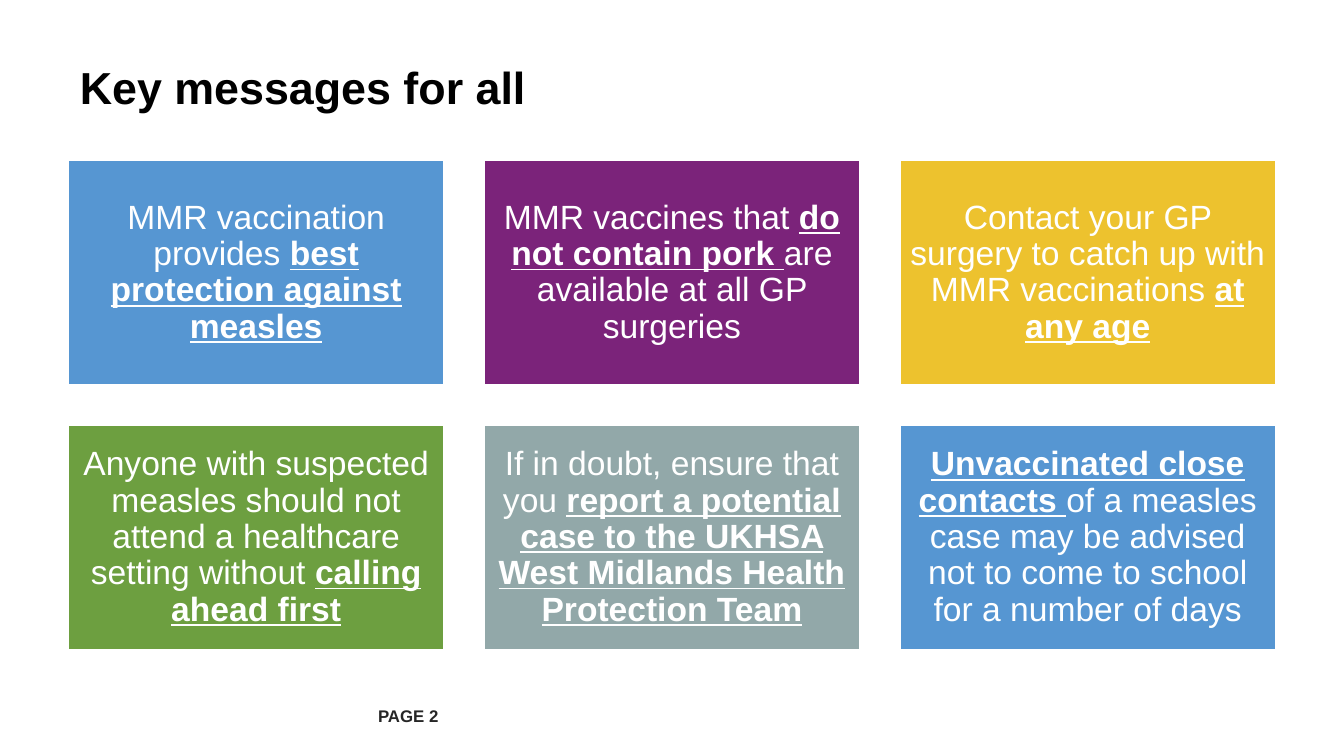
from dataclasses import dataclass

from pptx import Presentation
from pptx.dml.color import RGBColor
from pptx.enum.shapes import MSO_SHAPE
from pptx.enum.text import MSO_ANCHOR, MSO_AUTO_SIZE, PP_ALIGN
from pptx.util import Pt

PX = 9525


@dataclass(frozen=True)
class Theme:
    """Colours, font and type sizes of the slide."""
    font: str = "Arial"
    black: str = "000000"
    grey: str = "262626"
    white: str = "FFFFFF"
    blue: str = "5696D2"
    plum: str = "7B237A"
    gold: str = "EDC22E"
    green: str = "6D9F40"
    slate: str = "92A8A9"
    head: int = 24
    body: int = 18
    foot: int = 9


THEME = Theme()

CARDS = [
    (THEME.blue, [("MMR vaccination provides ", False),
                  ("best protection against measles", True)]),
    (THEME.plum, [("MMR vaccines that ", False),
                  ("do not contain pork ", True),
                  ("are available at all GP surgeries", False)]),
    (THEME.gold, [("Contact your GP surgery to catch up with MMR vaccinations ", False),
                  ("at any age", True)]),
    (THEME.green, [("Anyone with suspected measles should not attend "
                    "a healthcare setting without ", False),
                   ("calling ahead first", True)]),
    (THEME.slate, [("If in doubt, ensure that you ", False),
                   ("report a potential case to the UKHSA "
                    "West Midlands Health Protection Team", True)]),
    (THEME.blue, [("Unvaccinated close contacts ", True),
                  ("of a measles case may be advised not to come "
                   "to school for a number of days", False)]),
]


def scale(*sizes):
    """Turn px lengths into EMU."""
    return [round(size * PX) for size in sizes]


def style(para, size, color, align, bold=None):
    """Set the font and alignment of a paragraph."""
    para.alignment = align
    para.font.name = THEME.font
    para.font.size = Pt(size)
    para.font.bold = bold
    para.font.color.rgb = RGBColor.from_string(color)


def inset(frame, side, top):
    """Wrap and centre a text frame vertically, with px margins."""
    frame.word_wrap = True
    frame.auto_size = MSO_AUTO_SIZE.NONE
    frame.vertical_anchor = MSO_ANCHOR.MIDDLE
    frame.margin_left, frame.margin_right = scale(side, side)
    frame.margin_top, frame.margin_bottom = scale(top, top)


def add_title(slide, box, text):
    """Fill the title placeholder within the box."""
    title = slide.shapes.title
    title.left, title.top, title.width, title.height = scale(*box)
    title.text_frame.text = text
    inset(title.text_frame, 9, 4)
    style(title.text_frame.paragraphs[0], THEME.head, THEME.black, PP_ALIGN.LEFT, True)


def add_foot(slide, box, text):
    """Write the page label within the box."""
    frame = slide.shapes.add_textbox(*scale(*box)).text_frame
    frame.text = text
    inset(frame, 9, 4)
    style(frame.paragraphs[0], THEME.foot, THEME.grey, PP_ALIGN.LEFT, True)


def add_card(slide, box, color, parts):
    """Draw one message card within the box."""
    card = slide.shapes.add_shape(MSO_SHAPE.RECTANGLE, *scale(*box))
    card.shadow.inherit = False
    card.fill.solid()
    card.fill.fore_color.rgb = RGBColor.from_string(color)
    card.line.color.rgb = RGBColor.from_string(THEME.white)
    card.line.width = Pt(2)
    inset(card.text_frame, 7, 7)
    para = card.text_frame.paragraphs[0]
    para.line_spacing = 0.9
    style(para, THEME.body, THEME.white, PP_ALIGN.CENTER)
    for text, strong in parts:
        run = para.add_run()
        run.text = text
        if strong:
            run.font.bold = run.font.underline = True


def add_grid(slide, box, cards, cols=3, gap=27):
    """Lay the cards out in equal columns and rows within the box."""
    left, top, width, height = box
    rows = len(cards) // cols
    wide = (width - gap * (cols - 1)) / cols
    high = (height - gap * (rows - 1)) / rows
    for index, (color, parts) in enumerate(cards):
        row, col = divmod(index, cols)
        spot = (left + col * (wide + gap), top + row * (high + gap), wide, high)
        add_card(slide, spot, color, parts)


def main():
    """Build and save the slide."""
    deck = Presentation()
    deck.slide_width, deck.slide_height = scale(960, 540)
    slide = deck.slides.add_slide(deck.slide_layouts.get_by_name("Title Only"))
    add_foot(slide, (261, 497, 84, 29), "PAGE 2")
    add_title(slide, (48, 22, 864, 79), "Key messages for all")
    add_grid(slide, (48, 114, 864, 351), CARDS)
    deck.save("out.pptx")


if __name__ == "__main__":
    main()
